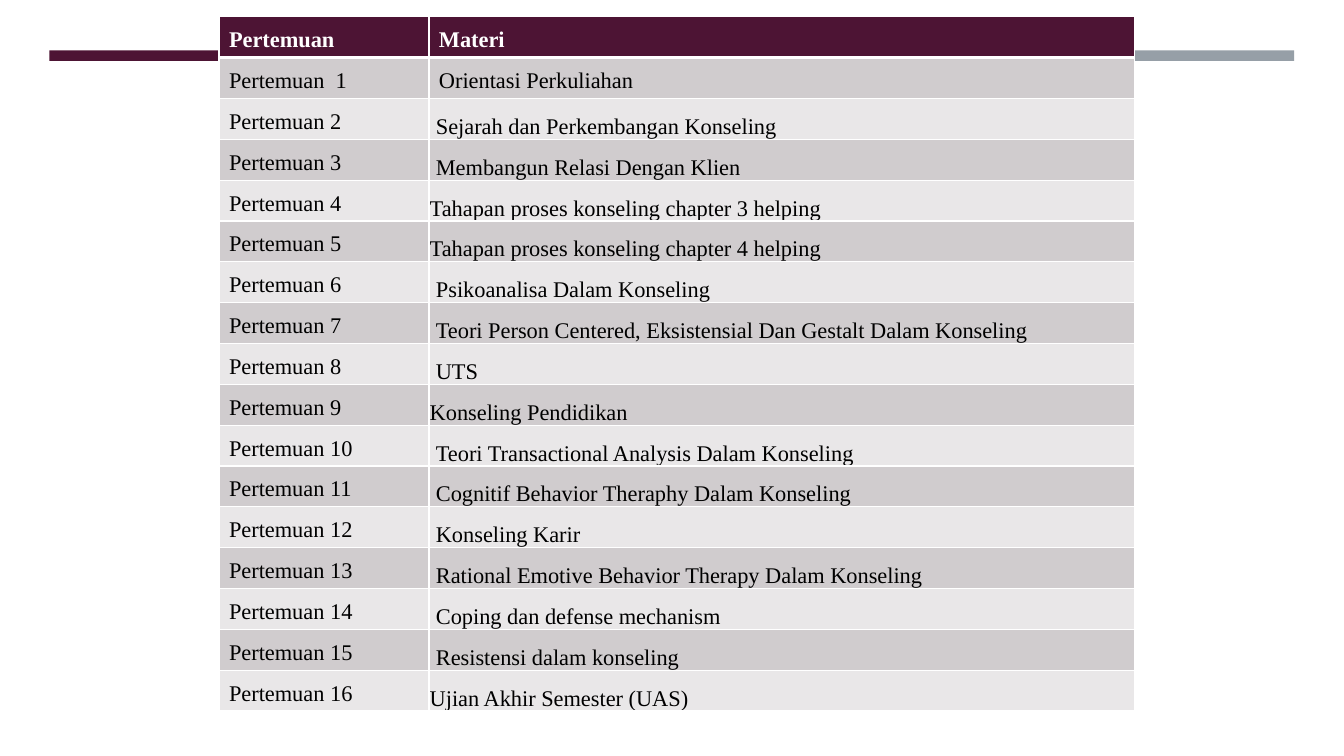
from lxml import etree
from pptx import Presentation
from pptx.dml.color import RGBColor
from pptx.enum.shapes import MSO_SHAPE
from pptx.enum.text import MSO_ANCHOR
from pptx.oxml.ns import qn
from pptx.util import Pt

RECTANGLE = MSO_SHAPE.RECTANGLE
BOTTOM = MSO_ANCHOR.BOTTOM

# Content: topic and inset kind of each meeting
HEADER = ("Pertemuan", "Materi")
TOPICS = [
    ("Orientasi Perkuliahan", "normal"),
    ("Sejarah dan Perkembangan Konseling", "narrow"),
    ("Membangun Relasi Dengan Klien", "narrow"),
    ("Tahapan proses konseling chapter 3 helping", "tight"),
    ("Tahapan proses konseling chapter 4 helping", "tight"),
    ("Psikoanalisa Dalam Konseling", "narrow"),
    ("Teori Person Centered, Eksistensial Dan Gestalt Dalam Konseling", "narrow"),
    ("UTS", "narrow"),
    ("Konseling Pendidikan", "tight"),
    ("Teori Transactional Analysis Dalam Konseling", "narrow"),
    ("Cognitif Behavior Theraphy Dalam Konseling", "narrow"),
    ("Konseling Karir", "narrow"),
    ("Rational Emotive Behavior Therapy Dalam Konseling", "narrow"),
    ("Coping dan defense mechanism", "narrow"),
    ("Resistensi dalam konseling", "narrow"),
    ("Ujian Akhir Semester (UAS)", "tight"),
]
WIDE_SPACED_MEETING = 7

THEME = {
    "font": "Times New Roman",
    "size": 16,
    "header": "4D1434",
    "bands": ("E9E7E8", "D0CCCE"),
    "bars": ("4D1434", "903163", "969FA7"),
    "light": "FFFFFF",
    "dark": "000000",
}

# Geometry in points; insets are left, top, right, bottom
SLIDE_SIZE = (960, 540)
BAR_LEFT, BAR_TOP, BAR_WIDTH, BAR_HEIGHT, BAR_STEP = 35.2, 36, 291.6, 7.5, 298.8
TABLE_LEFT, TABLE_TOP = 156.4, 12
COLUMN_WIDTHS = (150, 504)
ROW_HEIGHT = 29.18
INSETS = {
    "normal": (7.2, 3.6, 7.2, 3.6),
    "narrow": (5, 0, 5, 0),
    "tight": (0.6, 0.6, 0.6, 0),
}


def color(name):
    return RGBColor.from_string(name)


def add_borders(cell, top, bottom):
    properties = cell._tc.get_or_add_tcPr()
    for side, width in (("L", 1), ("R", 1), ("T", top), ("B", bottom)):
        line = etree.SubElement(properties, qn(f"a:ln{side}"), w=str(Pt(width)))
        fill = etree.SubElement(line, qn("a:solidFill"))
        etree.SubElement(fill, qn("a:srgbClr"), val=THEME["light"])


def format_cell(cell, text, row, inset):
    is_header = row == 0
    add_borders(cell, top=3 if row == 1 else 1, bottom=3 if is_header else 1)
    cell.fill.solid()
    cell.fill.fore_color.rgb = color(
        THEME["header"] if is_header else THEME["bands"][row % 2])
    cell.vertical_anchor = BOTTOM
    (cell.margin_left, cell.margin_top,
     cell.margin_right, cell.margin_bottom) = map(Pt, INSETS[inset])
    para = cell.text_frame.paragraphs[0]
    para.text = text
    para.font.name = THEME["font"]
    para.font.size = Pt(THEME["size"])
    para.font.bold = is_header
    para.font.color.rgb = color(THEME["light"] if is_header else THEME["dark"])
    return para


def main():
    deck = Presentation()
    deck.slide_width, deck.slide_height = map(Pt, SLIDE_SIZE)
    page = deck.slides.add_slide(deck.slide_layouts[6])

    # Bars behind the table
    for index, bar_color in enumerate(THEME["bars"]):
        bar = page.shapes.add_shape(
            RECTANGLE, Pt(BAR_LEFT + index * BAR_STEP), Pt(BAR_TOP),
            Pt(BAR_WIDTH), Pt(BAR_HEIGHT))
        bar.shadow.inherit = False
        bar.fill.solid()
        bar.fill.fore_color.rgb = color(bar_color)
        bar.line.fill.background()

    # Schedule table
    row_count = len(TOPICS) + 1
    table = page.shapes.add_table(
        row_count, len(HEADER), Pt(TABLE_LEFT), Pt(TABLE_TOP),
        Pt(sum(COLUMN_WIDTHS)), Pt(row_count * ROW_HEIGHT)).table
    for column, width in zip(table.columns, COLUMN_WIDTHS):
        column.width = Pt(width)
    for table_row in table.rows:
        table_row.height = Pt(ROW_HEIGHT)

    for index, text in enumerate(HEADER):
        format_cell(table.cell(0, index), text, 0, "normal")
    for number, (topic, inset) in enumerate(TOPICS, start=1):
        gap = "  " if number == 1 else " "
        format_cell(table.cell(number, 0), f"Pertemuan{gap}{number}", number, "normal")
        para = format_cell(table.cell(number, 1), topic, number, inset)
        if number == WIDE_SPACED_MEETING:
            para.line_spacing = 1.5

    deck.save("out.pptx")


if __name__ == "__main__":
    main()
